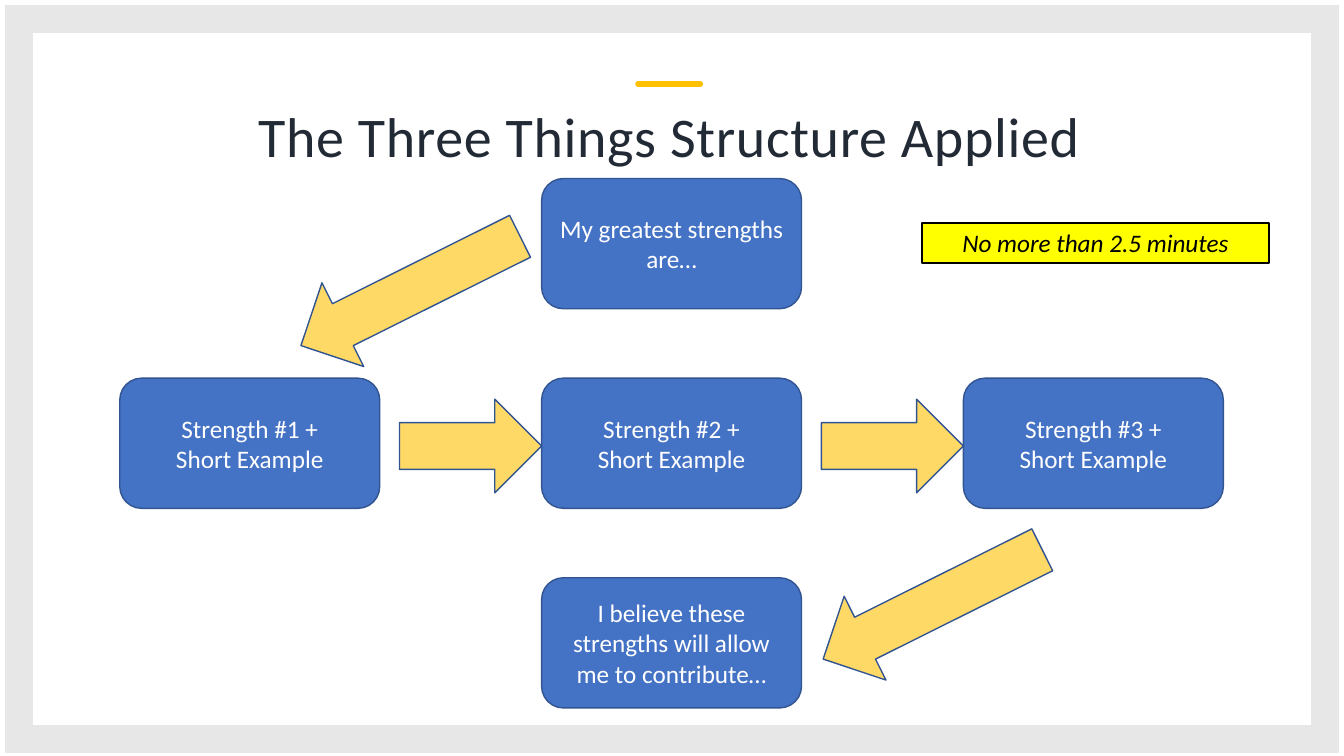
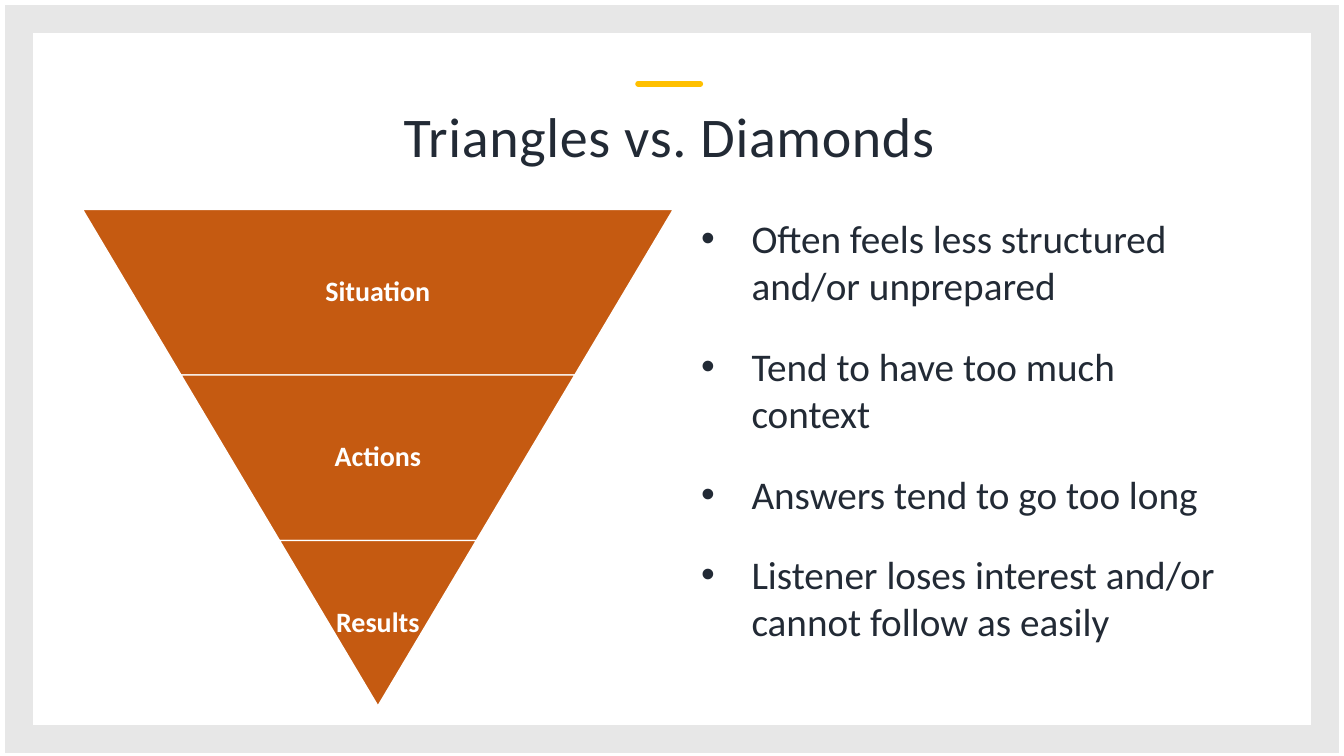
from lxml import etree
from pptx import Presentation
from pptx.dml.color import RGBColor
from pptx.enum.shapes import MSO_CONNECTOR, MSO_SHAPE
from pptx.enum.text import MSO_ANCHOR, PP_ALIGN
from pptx.oxml.ns import qn
from pptx.util import Cm, Pt

RECTANGLE, ROUNDED = MSO_SHAPE.RECTANGLE, MSO_SHAPE.ROUNDED_RECTANGLE
ARROW, TRAPEZOID = MSO_SHAPE.RIGHT_ARROW, MSO_SHAPE.TRAPEZOID
STRAIGHT = MSO_CONNECTOR.STRAIGHT
LEFT, CENTER = PP_ALIGN.LEFT, PP_ALIGN.CENTER
TOP, MIDDLE = MSO_ANCHOR.TOP, MSO_ANCHOR.MIDDLE

# Content
FLOW_TITLE = "The Three Things Structure Applied"
FLOW_STEPS = [  # column, row, lines
    (1, 0, ["My greatest strengths are…"]),
    (0, 1, ["Strength #1 +", "Short Example"]),
    (1, 1, ["Strength #2 +", "Short Example"]),
    (2, 1, ["Strength #3 +", "Short Example"]),
    (1, 2, ["I believe these strengths will allow me to contribute…"]),
]
TIME_LIMIT = "No more than 2.5 minutes"
TRIANGLE_TITLE = "Triangles vs. Diamonds"
TIERS = [("Situation", 0.65), ("Actions", 0.65), ("Results", 1)]  # label, share of width
DRAWBACKS = [
    "Often feels less structured and/or unprepared",
    "Tend to have too much context",
    "Answers tend to go too long",
    "Listener loses interest and/or cannot follow as easily",
]

# Shared style
COLORS = {
    "frame": "E7E7E7", "accent": "FFC000", "ink": "222A35", "white": "FFFFFF",
    "step": "4472C4", "outline": "325491", "arrow": "FFD966",
    "note": "FFFF00", "black": "000000", "tier": "C55A11",
}
TITLE_FONT = {"size": Pt(40), "color": "ink"}
STEP_FONT = {"size": Pt(18), "color": "white"}
NOTE_FONT = {"size": Pt(18), "color": "black", "italic": True}
TIER_FONT = {"size": Pt(20), "color": "white", "bold": True}
LIST_FONT = {"size": Pt(28), "color": "ink"}
TIGHT = {"line_spacing": 0.9}

# Layout in centimetres
PAGE_SIZE = (33.87, 19.05)
FRAME_AT = (0.48, 0.48, 32.92, 18.14)
TITLE_AT = (2.39, 2.49, 29.13, 2.01)
STEP_LEFT, STEP_TOP, STEP_WIDTH, STEP_HEIGHT = 3.02, 4.5, 6.55, 3.28
COLUMN_PITCH, ROW_PITCH = 10.63, 5.03
ARROW_HEIGHT, ACROSS_WIDTH, DOWN_WIDTH = 2.36, 3.58, 6.17
ACROSS_TOP = 10.06
DOWN_ARROWS = [(7.26, 6.15), (20.42, 14.05)]
DOWN_ANGLE = 153.5
NOTE_AT = (23.24, 5.61, 8.74, 1.02)
TIER_LEFT, TIER_TOP, TIER_HEIGHT, TIER_SLOPE = 2.08, 5.28, 4.17, 0.595
LIST_AT = (17.42, 5.28, 14.05, 11.2)


def rgb(name):
    return RGBColor.from_string(COLORS[name])


def write(box, lines, font, align=CENTER, anchor=MIDDLE, insets=None, paragraph=None):
    """Fill a box with one paragraph per line."""
    frame = box.text_frame
    frame.word_wrap, frame.vertical_anchor = True, anchor
    for side, length in (insets or {}).items():
        setattr(frame, f"margin_{side}", Cm(length))
    frame.text = "\n".join(lines)
    for para in frame.paragraphs:
        for name, value in {"alignment": align, **(paragraph or {})}.items():
            setattr(para, name, value)
        for span in para.runs:
            span.font.name = "Calibri"
            for name, value in font.items():
                if name == "color":
                    span.font.color.rgb = rgb(value)
                else:
                    setattr(span.font, name, value)


def add_shape(page, kind, at, fill, line, width=1.0):
    shape = page.shapes.add_shape(kind, *map(Cm, at))
    shape.shadow.inherit = False
    if fill:
        shape.fill.solid()
        shape.fill.fore_color.rgb = rgb(fill)
    else:
        shape.fill.background()
    shape.line.color.rgb = rgb(line)
    shape.line.width = Pt(width)
    return shape


def outline_of(shape):
    return shape._element.spPr.find(qn("a:ln"))


def add_page(deck, title):
    """Title-only page with the grey frame and the short accent line."""
    page = deck.slides.add_slide(deck.slide_layouts[5])
    frame = add_shape(page, RECTANGLE, FRAME_AT, None, "frame", 20)
    etree.SubElement(outline_of(frame), qn("a:miter"), lim="800000")

    accent = page.shapes.add_connector(STRAIGHT, Cm(16.08), Cm(2.11), Cm(17.65), Cm(2.11))
    accent.line.color.rgb = rgb("accent")
    accent.line.width = Pt(4)
    outline_of(accent).set("cap", "rnd")
    etree.SubElement(accent._element.spPr, qn("a:effectLst"))

    heading = page.shapes.title
    for name, value in zip(("left", "top", "width", "height"), TITLE_AT):
        setattr(heading, name, Cm(value))
    insets = {"left": 0.25, "right": 0.42, "top": 0.25, "bottom": 0.2}
    write(heading, [title], TITLE_FONT, insets=insets, paragraph=TIGHT)
    for span in heading.text_frame.paragraphs[0].runs:
        span._r.get_or_add_rPr().set("spc", "50")
    return page


def build_flow(deck):
    page = add_page(deck, FLOW_TITLE)
    # Steps on a grid of three columns and three rows
    for column, row, lines in FLOW_STEPS:
        at = (STEP_LEFT + column * COLUMN_PITCH, STEP_TOP + row * ROW_PITCH,
              STEP_WIDTH, STEP_HEIGHT)
        write(add_shape(page, ROUNDED, at, "step", "outline"), lines, STEP_FONT)

    # Arrows across end at the next step; the others point down to the left
    arrows = [(STEP_LEFT + column * COLUMN_PITCH - ACROSS_WIDTH, ACROSS_TOP, ACROSS_WIDTH, 0)
              for column in (1, 2)]
    arrows += [(left, top, DOWN_WIDTH, DOWN_ANGLE) for left, top in DOWN_ARROWS]
    for left, top, width, angle in arrows:
        arrow = add_shape(page, ARROW, (left, top, width, ARROW_HEIGHT), "arrow", "outline")
        arrow.rotation = angle

    note = add_shape(page, RECTANGLE, NOTE_AT, "note", "black", 1.5)
    write(note, [TIME_LIMIT], NOTE_FONT)


def build_triangle(deck):
    page = add_page(deck, TRIANGLE_TITLE)
    # Each tier is narrower by one slope step on both sides
    step = TIER_SLOPE * TIER_HEIGHT
    for index, (label, share) in enumerate(TIERS):
        left, top = TIER_LEFT + index * step, TIER_TOP + index * TIER_HEIGHT
        width = 2 * step * (len(TIERS) - index)
        tier = add_shape(page, TRAPEZOID, (left, top, width, TIER_HEIGHT), "tier", "white")
        tier.adjustments[0] = TIER_SLOPE
        tier.rotation = 180
        label_at = (left + width * (1 - share) / 2, top, width * share, TIER_HEIGHT)
        box = page.shapes.add_textbox(*map(Cm, label_at))
        insets = dict.fromkeys(("left", "right", "top", "bottom"), 0.08)
        write(box, [label], TIER_FONT, insets=insets, paragraph=TIGHT)

    # Bulleted drawbacks
    box = page.shapes.add_textbox(*map(Cm, LIST_AT))
    write(box, DRAWBACKS, LIST_FONT, LEFT, TOP, paragraph={"space_before": Pt(24)})
    for para in box.text_frame.paragraphs:
        properties = para._p.get_or_add_pPr()
        properties.set("marL", str(Cm(1.27)))
        properties.set("indent", str(-Cm(1.27)))
        etree.SubElement(properties, qn("a:buFont"), typeface="Arial")
        etree.SubElement(properties, qn("a:buChar"), char="•")


def main():
    deck = Presentation()
    deck.slide_width, deck.slide_height = map(Cm, PAGE_SIZE)
    build_flow(deck)
    build_triangle(deck)
    deck.save("out.pptx")


if __name__ == "__main__":
    main()
